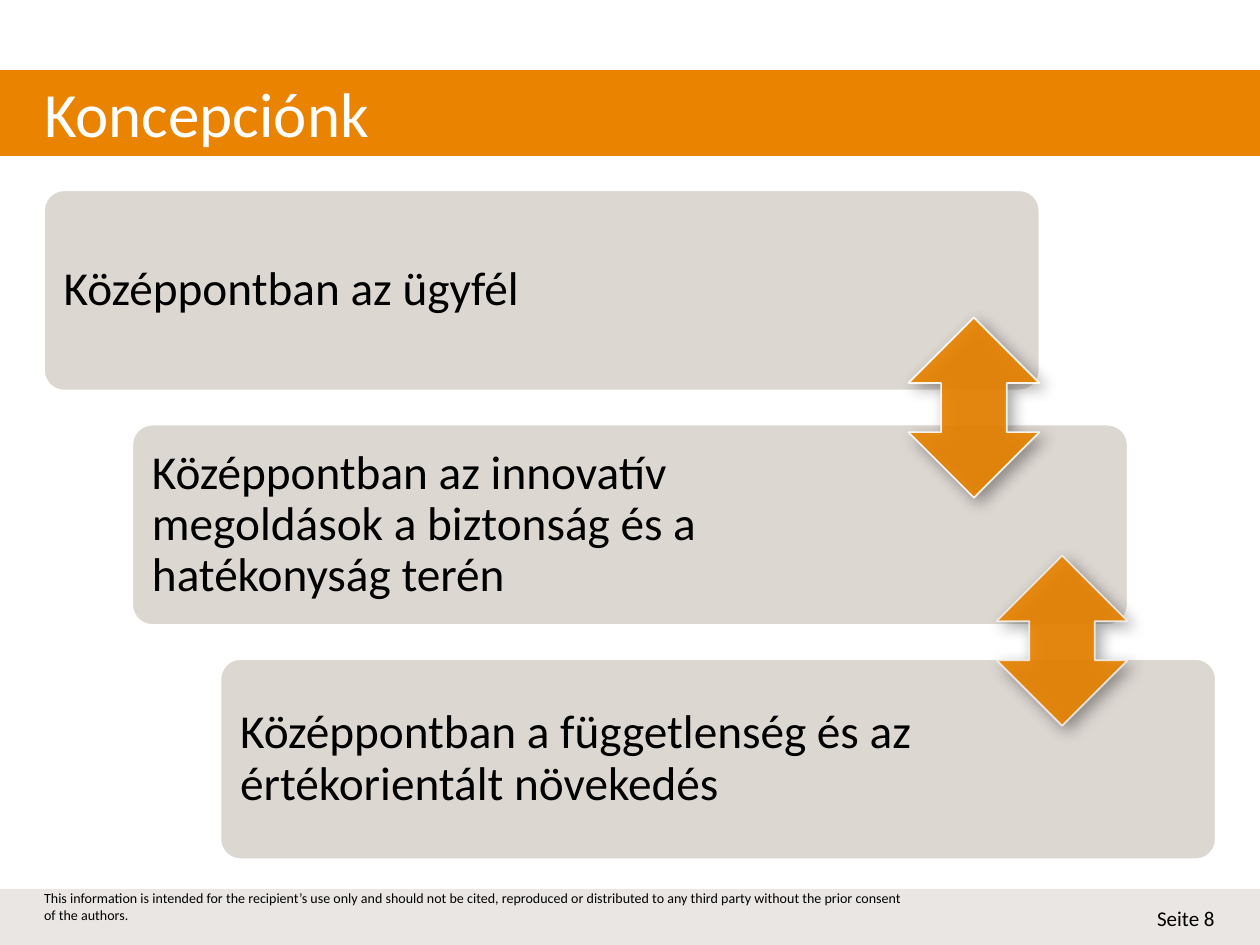
from lxml import etree
from pptx import Presentation
from pptx.dml.color import RGBColor
from pptx.enum.shapes import MSO_SHAPE
from pptx.enum.text import MSO_ANCHOR, PP_ALIGN
from pptx.oxml.ns import qn
from pptx.util import Inches, Pt

RECT, ROUNDED = MSO_SHAPE.RECTANGLE, MSO_SHAPE.ROUNDED_RECTANGLE
DOUBLE_ARROW = MSO_SHAPE.UP_DOWN_ARROW
LEFT, RIGHT = PP_ALIGN.LEFT, PP_ALIGN.RIGHT
TOP, MIDDLE = MSO_ANCHOR.TOP, MSO_ANCHOR.MIDDLE

TITLE = "Koncepciónk"
PRINCIPLES = [
    "Középpontban az ügyfél",
    "Középpontban az innovatív megoldások a biztonság és a hatékonyság terén",
    "Középpontban a függetlenség és az értékorientált növekedés",
]
DISCLAIMER = (
    "This information is intended for the recipient’s use only and should not be cited, "
    "reproduced or distributed to any third party without the prior consent of the authors."
)
PAGE_LABEL = "Seite 8"

COLORS = {
    "orange": "E98300", "footer": "EAE6E3", "card": "DDD7D2",
    "white": "FFFFFF", "pale": "F2F0EE", "black": "000000",
}
FONT = "Calibri"
SLIDE_W, SLIDE_H = 10, 7.5
MARGIN = 0.35
BAND_TOP, BAND_H = 0.56, 0.67
FOOTER_H = 0.44
CARD_TOP, CARD_W, CARD_H = 1.51, 7.9, 1.59
STEP_X, STEP_Y = 0.7, 1.86
ARROW_W = 1.04
ARROWS = [(2.52, 1.43, "white"), (4.41, 1.35, "pale")]  # top, height, outline


def rgb(name):
    return RGBColor.from_string(COLORS[name])


def write(shape, text, size, color="black", align=LEFT, anchor=MIDDLE,
          insets=(0, 0, 0, 0), line_spacing=None):
    """Insets are left, top, right, bottom in inches."""
    frame = shape.text_frame
    frame.word_wrap = True
    frame.vertical_anchor = anchor
    (frame.margin_left, frame.margin_top,
     frame.margin_right, frame.margin_bottom) = map(Inches, insets)
    paragraph = frame.paragraphs[0]
    paragraph.text = text
    paragraph.alignment = align
    paragraph.line_spacing = line_spacing
    font = paragraph.font
    font.name, font.size = FONT, Pt(size)
    font.color.rgb = rgb(color)


def add_block(slide, kind, box, fill, outline):
    shape = slide.shapes.add_shape(kind, *map(Inches, box))
    shape.shadow.inherit = False
    shape.fill.solid()
    shape.fill.fore_color.rgb = rgb(fill)
    shape.line.color.rgb = rgb(outline)
    shape.line.width = Pt(1)
    return shape


def set_opacity(color_parent, percent):
    color = color_parent.find(".//" + qn("a:srgbClr"))
    etree.SubElement(color, qn("a:alpha"), val=str(percent * 1000))


def add_soft_shadow(shape):
    effects = shape._element.spPr.find(qn("a:effectLst"))
    shadow = etree.SubElement(
        effects, qn("a:outerShdw"), blurRad=str(Pt(9)), dist=str(Pt(4)),
        dir=str(45 * 60000), algn="tl", rotWithShape="0")
    etree.SubElement(shadow, qn("a:srgbClr"), val=COLORS["black"])
    set_opacity(shadow, 40)


def add_title(slide):
    title = slide.shapes.title
    title.left, title.top = Inches(MARGIN), Inches(BAND_TOP)
    title.width, title.height = Inches(SLIDE_W - 2 * MARGIN), Inches(BAND_H)
    write(title, TITLE, 36, color="white")
    band = add_block(slide, RECT, (0, BAND_TOP, SLIDE_W, BAND_H), "orange", "orange")
    title._element.addprevious(band._element)  # the band lies behind the title


def add_footer(slide):
    top = SLIDE_H - FOOTER_H
    add_block(slide, RECT, (0, top, SLIDE_W, FOOTER_H), "footer", "footer")
    disclaimer = slide.shapes.add_textbox(*map(Inches, (MARGIN, top, 6.93, 0.28)))
    write(disclaimer, DISCLAIMER, 8, anchor=TOP)
    page = slide.shapes.add_textbox(*map(Inches, (7.44, top + 0.09, 2.2, 0.28)))
    write(page, PAGE_LABEL, 12, align=RIGHT)


def add_staircase(slide):
    for i, principle in enumerate(PRINCIPLES):
        box = (MARGIN + i * STEP_X, CARD_TOP + i * STEP_Y, CARD_W, CARD_H)
        card = add_block(slide, ROUNDED, box, "card", "white")
        card.adjustments[0] = 0.1
        write(card, principle, 27, insets=(0.11, 0.11, 1.83, 0.11), line_spacing=0.9)
    for i, (top, height, outline) in enumerate(ARROWS):
        left = MARGIN + CARD_W + i * STEP_X - ARROW_W
        arrow = add_block(slide, DOUBLE_ARROW, (left, top, ARROW_W, height),
                          "orange", outline)
        properties = arrow._element.spPr
        set_opacity(properties.find(qn("a:solidFill")), 90)
        set_opacity(properties.find(qn("a:ln")), 90)
        add_soft_shadow(arrow)


def main():
    deck = Presentation()
    deck.slide_width, deck.slide_height = Inches(SLIDE_W), Inches(SLIDE_H)
    slide = deck.slides.add_slide(deck.slide_layouts.get_by_name("Title Only"))
    add_title(slide)
    add_footer(slide)
    add_staircase(slide)
    deck.save("out.pptx")


if __name__ == "__main__":
    main()
